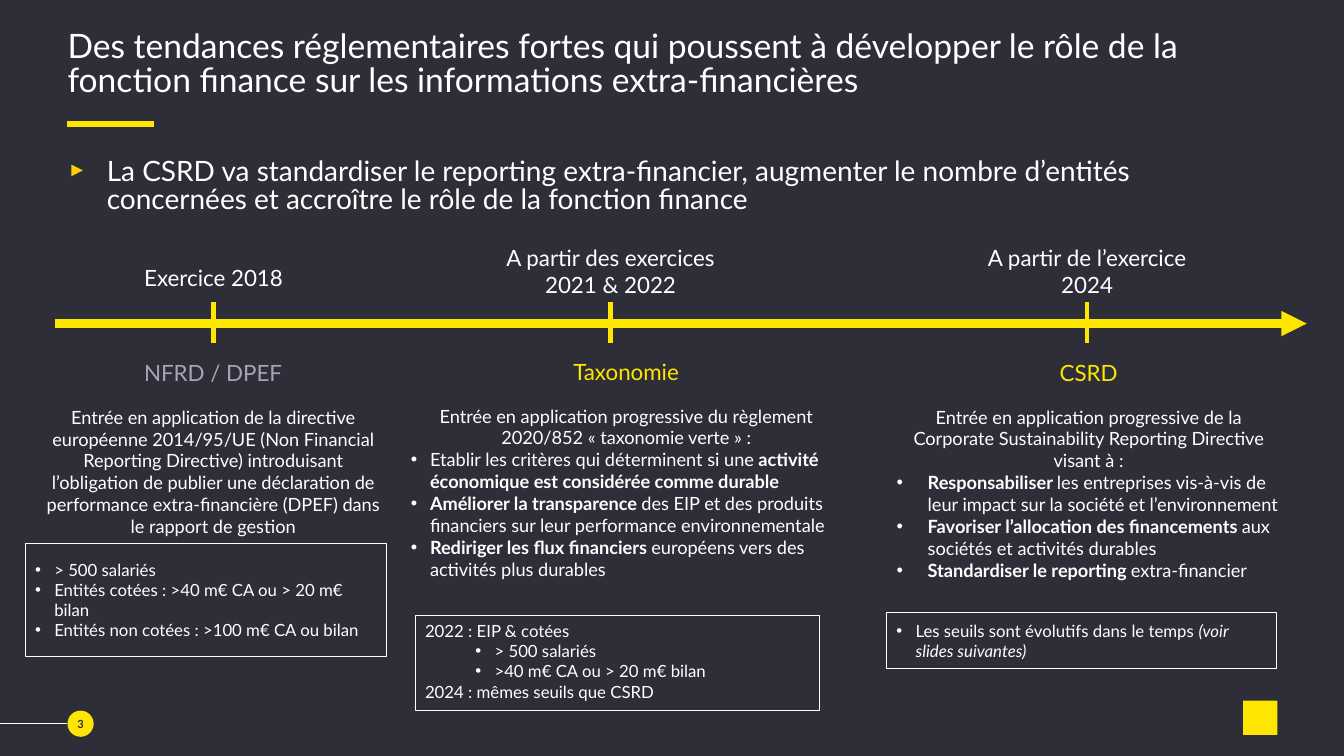
from dataclasses import dataclass

from lxml import etree
from pptx import Presentation
from pptx.dml.color import RGBColor
from pptx.enum.shapes import MSO_CONNECTOR, MSO_SHAPE
from pptx.enum.text import MSO_ANCHOR, PP_ALIGN
from pptx.oxml.ns import qn
from pptx.util import Pt

LEFT, CENTER = PP_ALIGN.LEFT, PP_ALIGN.CENTER
TOP, MIDDLE = MSO_ANCHOR.TOP, MSO_ANCHOR.MIDDLE
RECT, OVAL = MSO_SHAPE.RECTANGLE, MSO_SHAPE.OVAL
STRAIGHT = MSO_CONNECTOR.STRAIGHT
PX = 9144  # 100 px to the inch


@dataclass(frozen=True)
class Theme:
    font: str = "Lato"
    dark: str = "2E2E38"
    white: str = "FFFFFF"
    yellow: str = "FFE600"
    gold: str = "FFD200"
    grey: str = "A5A5B5"
    title: int = 24
    lead: int = 20
    head: int = 16
    body: int = 13
    note: int = 12
    page: int = 8


THEME = Theme()


def rgb(code):
    return RGBColor.from_string(code)


def bullet(para, left, hang, mark="•", color=None, scale=None):
    props = para._p.get_or_add_pPr()
    props.set("marL", str(left * PX))
    props.set("indent", str(-hang * PX))
    if color:
        tint = etree.SubElement(props, qn("a:buClr"))
        etree.SubElement(tint, qn("a:srgbClr"), val=color)
    if scale:
        etree.SubElement(props, qn("a:buSzPct"), val=str(scale * 1000))
    etree.SubElement(props, qn("a:buFont"), typeface="Arial")
    etree.SubElement(props, qn("a:buChar"), char=mark)


def write(frame, runs, size, color=THEME.white, align=LEFT, dot=None,
          after=0, lines=None):
    """Add a paragraph; runs are (text, style), style being "", "b" or "i"."""
    para = frame.paragraphs[0]
    if para.runs:
        para = frame.add_paragraph()
    if dot:
        bullet(para, *dot)
    para.alignment = align
    para.space_after = Pt(after)
    if lines:
        para.line_spacing = lines
    for text, style in runs:
        run = para.add_run()
        run.text = text
        font = run.font
        font.name, font.size = THEME.font, Pt(size)
        font.color.rgb = rgb(color)
        font.bold, font.italic = style == "b", style == "i"


def setup(frame, inset, anchor, wrap=True):
    frame.word_wrap = wrap
    frame.vertical_anchor = anchor
    frame.margin_left = frame.margin_right = inset * PX
    frame.margin_top = frame.margin_bottom = inset * PX // 2
    return frame


def label(slide, box, inset=0, anchor=TOP):
    shape = slide.shapes.add_textbox(*(v * PX for v in box))
    return setup(shape.text_frame, inset, anchor)


def block(slide, kind, box, fill=None, line=None):
    shape = slide.shapes.add_shape(kind, *(v * PX for v in box))
    shape.shadow.inherit = False
    if fill:
        shape.fill.solid()
        shape.fill.fore_color.rgb = rgb(fill)
    else:
        shape.fill.background()
    if line:
        shape.line.color.rgb = rgb(line)
        shape.line.width = Pt(0.75)
    else:
        shape.line.fill.background()
    return shape.text_frame


def rule(slide, ends, width, color=THEME.yellow, arrow=False):
    line = slide.shapes.add_connector(STRAIGHT, *(v * PX for v in ends))
    line.line.color.rgb = rgb(color)
    line.line.width = Pt(width)
    if arrow:
        etree.SubElement(line.line._get_or_add_ln(), qn("a:tailEnd"),
                         type="triangle")
    etree.SubElement(line._element.spPr, qn("a:effectLst"))


def stage(slide, box, name, color, intro, points=(), dot=None):
    frame = label(slide, box, 10)
    write(frame, [(name, "")], THEME.head, color, CENTER, after=14.5)
    write(frame, [(intro, "")], THEME.body, align=CENTER)
    for runs in points:
        write(frame, runs, THEME.body, dot=dot)


def note(slide, box, rows, anchor=MIDDLE):
    """Add a framed box; rows are (runs, bullet)."""
    frame = setup(block(slide, RECT, box, line=THEME.white), 10, anchor)
    for runs, dot in rows:
        write(frame, runs, THEME.note, dot=dot)


def main():
    deck = Presentation()
    deck.slide_width, deck.slide_height = 1334 * PX, 750 * PX
    slide = deck.slides.add_slide(deck.slide_layouts[6])
    slide.background.fill.solid()
    slide.background.fill.fore_color.rgb = rgb(THEME.dark)

    # Page furniture
    block(slide, RECT, (1234, 695, 34, 34), THEME.yellow)
    rule(slide, (67, 123, 153, 123), 4.5)
    rule(slide, (0, 718, 67, 718), 0.75, THEME.white)
    badge = block(slide, OVAL, (67, 705, 26, 26), THEME.yellow)
    setup(badge, 0, MIDDLE, False)
    write(badge, [("3", "b")], THEME.page, THEME.dark, CENTER)

    # Title and lead
    write(label(slide, (67, 32, 1201, 65), anchor=MIDDLE),
          [("Des tendances réglementaires fortes qui poussent à développer le rôle de la fonction finance sur les informations extra-financières", "")],
          THEME.title, lines=0.85)
    write(label(slide, (67, 157, 1201, 65)),
          [("La CSRD va standardiser le reporting extra-financier, augmenter le nombre d’entités concernées et accroître le rôle de la fonction finance", "")],
          THEME.lead, dot=(39, 39, "►", THEME.gold, 70), lines=0.85)

    # Timeline
    rule(slide, (55, 321, 1297, 321), 6, arrow=True)
    for mid, top, high, date in (
            (212, 262, 27, "Exercice 2018"),
            (606, 242, 54, "A partir des exercices 2021 & 2022"),
            (1079, 242, 54, "A partir de l’exercice 2024")):
        rule(slide, (mid, 300, mid, 340), 3)
        write(label(slide, (mid - 126, top, 252, high)), [(date, "")],
              THEME.head, align=CENTER)

    # Stages
    stage(slide, (32, 351, 359, 188), "NFRD / DPEF", THEME.grey,
          "Entrée en application de la directive européenne 2014/95/UE (Non Financial Reporting Directive) introduisant l’obligation de publier une déclaration de performance extra-financière (DPEF) dans le rapport de gestion")
    stage(slide, (398, 350, 447, 254), "Taxonomie", THEME.yellow,
          "Entrée en application progressive du règlement 2020/852 « taxonomie verte » :",
          ([("Etablir les critères qui déterminent si une ", ""),
            ("activité économique est considérée comme durable", "b")],
           [("Améliorer la transparence ", "b"),
            ("des EIP et des produits financiers sur leur performance environnementale", "")],
           [("Rediriger les flux financiers ", "b"),
            ("européens vers des activités plus durables", "")]),
          (19, 19))
    stage(slide, (880, 351, 401, 254), "CSRD", THEME.yellow,
          "Entrée en application progressive de la Corporate Sustainability Reporting Directive visant à :",
          ([("Responsabiliser ", "b"),
            ("les entreprises vis-à-vis de leur impact sur la société et l’environnement", "")],
           [("Favoriser l’allocation des financements ", "b"),
            ("aux sociétés et activités durables", "")],
           [("Standardiser le reporting ", "b"), ("extra-financier", "")]),
          (31, 31))

    # Threshold notes
    near, deep = (19, 19), (69, 19)
    note(slide, (25, 539, 359, 112), (
        ([("> 500 salariés", "")], near),
        ([("Entités cotées : >40 m€ CA ou > 20 m€ bilan", "")], near),
        ([("Entités non cotées : >100 m€ CA ou bilan", "")], near)))
    note(slide, (880, 608, 387, 55), (
        ([("Les seuils sont évolutifs dans le temps ", ""),
          ("(voir slides suivantes)", "i")], near),))
    note(slide, (412, 611, 401, 94), (
        ([("2022 : EIP & cotées", "")], None),
        ([("> 500 salariés", "")], deep),
        ([(">40 m€ CA ou > 20 m€ bilan", "")], deep),
        ([("2024 : mêmes seuils que CSRD", "")], None)), TOP)

    deck.save("out.pptx")


if __name__ == "__main__":
    main()
